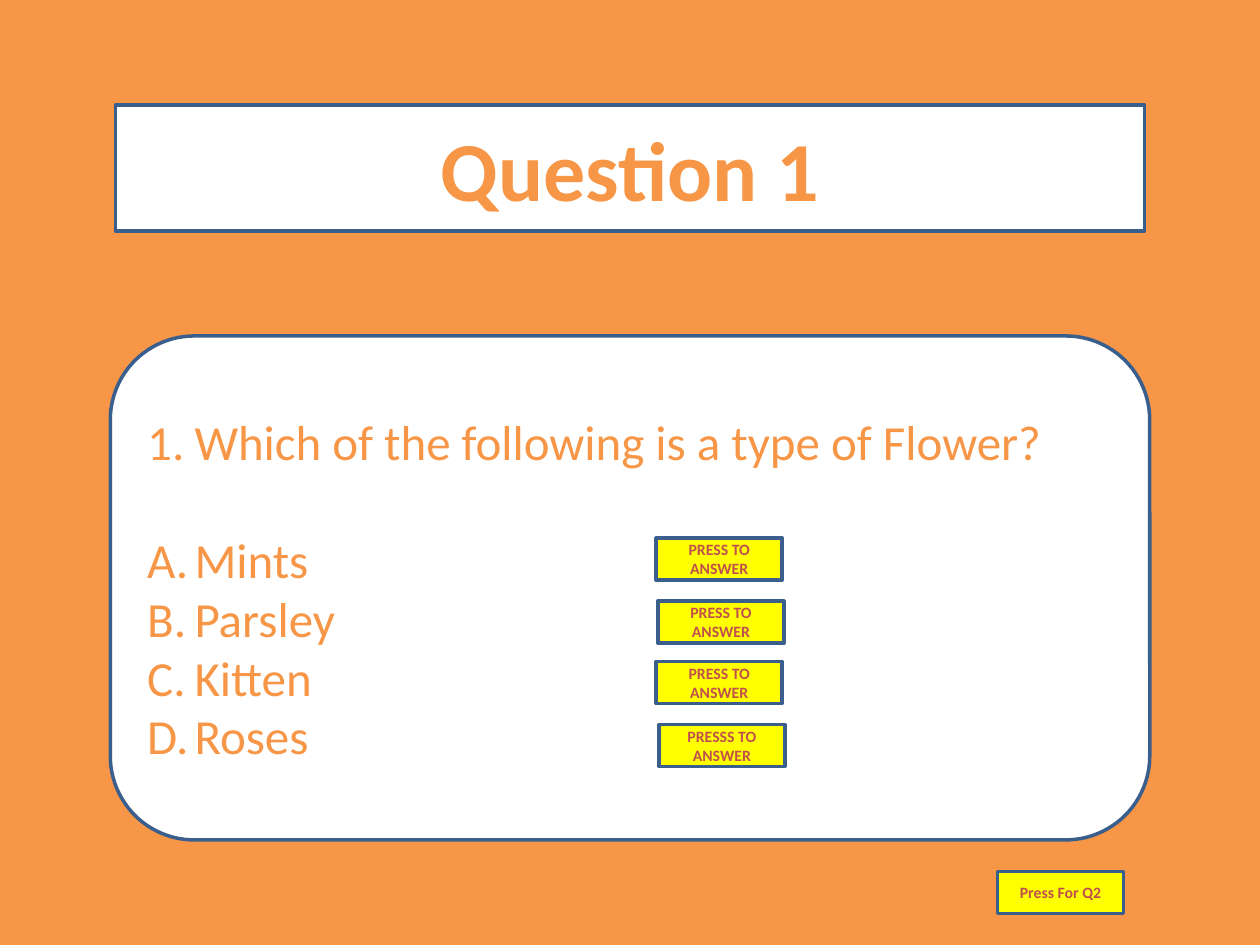
from pptx import Presentation
from pptx.dml.color import RGBColor
from pptx.enum.shapes import MSO_SHAPE
from pptx.enum.text import MSO_ANCHOR, MSO_AUTO_SIZE, PP_ALIGN
from pptx.oxml.ns import qn
from pptx.util import Pt
from lxml.etree import SubElement

COLORS = {
    "orange": "F79646",
    "white": "FFFFFF",
    "outline": "3A5F8C",
    "button": "FFFF00",
    "button_text": "C0504D",
}
TITLE_FONT = {"name": "Calibri", "size": Pt(48), "bold": True}
BODY_FONT = {"name": "Calibri", "size": Pt(28), "bold": False}
BUTTON_FONT = {"name": "Calibri", "size": Pt(9), "bold": True}

ANSWERS = ["Mints", "Parsley", "Kitten", "Roses"]
# left, top and label of each button
BUTTONS = [
    (375, 307.5, "PRESS TO ANSWER"),
    (376, 343.5, "PRESS TO ANSWER"),
    (375, 378, "PRESS TO ANSWER"),
    (376.5, 414, "PRESSS TO ANSWER"),
    (570, 498, "Press For Q2"),
]


def rgb(color):
    return RGBColor.from_string(COLORS[color])


def paint(box, fill):
    """Give a box its fill, outline and centred-height text frame."""
    box.fill.solid()
    box.fill.fore_color.rgb = rgb(fill)
    box.line.color.rgb = rgb("outline")
    box.line.width = Pt(2)
    frame_format = {"word_wrap": True, "auto_size": MSO_AUTO_SIZE.NONE,
                    "vertical_anchor": MSO_ANCHOR.MIDDLE}
    for key, value in frame_format.items():
        setattr(box.text_frame, key, value)


def write(paragraph, text, font_format, color, align):
    run = paragraph.add_run()
    run.text = text
    for key, value in font_format.items():
        setattr(run.font, key, value)
    run.font.color.rgb = rgb(color)
    paragraph.alignment = align


def number(paragraph, scheme):
    """Number a paragraph automatically, with a hanging indent."""
    properties = paragraph._p.get_or_add_pPr()
    properties.set("marL", str(Pt(27)))
    properties.set("indent", str(-Pt(27)))
    SubElement(properties, qn("a:buFont"), typeface="+mj-lt")
    SubElement(properties, qn("a:buAutoNum"), type=scheme)


def add_box(slide, kind, left, top, width, height, fill):
    box = slide.shapes.add_shape(kind, Pt(left), Pt(top), Pt(width), Pt(height))
    box.shadow.inherit = False
    paint(box, fill)
    return box


def format_title(slide, text):
    title = slide.shapes.title
    place = {"left": Pt(66), "top": Pt(60), "width": Pt(588), "height": Pt(72)}
    for key, value in place.items():
        setattr(title, key, value)
    outline = SubElement(title._element.spPr, qn("a:prstGeom"), prst="roundRect")
    SubElement(outline, qn("a:avLst"))
    paint(title, "white")
    write(title.text_frame.paragraphs[0], text, TITLE_FONT, "orange", PP_ALIGN.CENTER)


def add_question(slide, text, answers):
    panel = add_box(slide, MSO_SHAPE.ROUNDED_RECTANGLE, 63, 192, 594, 288, "white")
    question = panel.text_frame.paragraphs[0]
    write(question, text, BODY_FONT, "orange", PP_ALIGN.LEFT)
    question.space_after = Pt(34)
    number(question, "arabicPeriod")
    for answer in answers:
        choice = panel.text_frame.add_paragraph()
        write(choice, answer, BODY_FONT, "orange", PP_ALIGN.LEFT)
        number(choice, "alphaUcPeriod")


def add_button(slide, left, top, label):
    button = add_box(slide, MSO_SHAPE.RECTANGLE, left, top, 72, 24, "button")
    write(button.text_frame.paragraphs[0], label, BUTTON_FONT, "button_text",
          PP_ALIGN.CENTER)


def main():
    quiz = Presentation()
    quiz.slide_width, quiz.slide_height = Pt(720), Pt(540)
    slide = quiz.slides.add_slide(quiz.slide_layouts[5])
    slide.background.fill.solid()
    slide.background.fill.fore_color.rgb = rgb("orange")

    # Heading and question panel
    format_title(slide, "Question 1")
    add_question(slide, "Which of the following is a type of Flower?", ANSWERS)

    # Answer buttons and the button to the next question
    for left, top, label in BUTTONS:
        add_button(slide, left, top, label)

    quiz.save("out.pptx")


if __name__ == "__main__":
    main()
